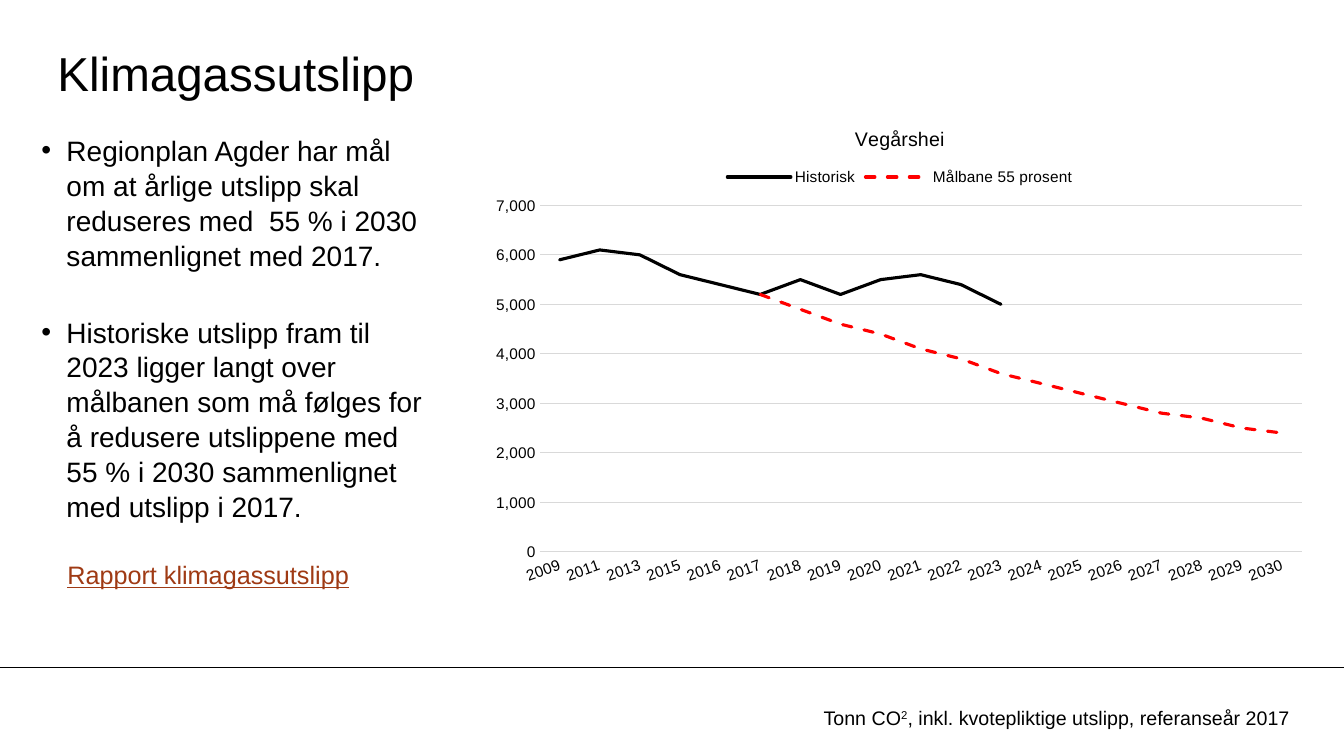
"""Builds the slide on greenhouse gas emissions in Vegårshei."""
import dataclasses

import pptx
import pptx.chart.data
import pptx.dml.color
import pptx.enum.chart
import pptx.enum.dml
import pptx.enum.shapes
import pptx.enum.text
import pptx.oxml
import pptx.oxml.ns
import pptx.util

HEADING = "Klimagassutslipp"
GOALS = [
    "Regionplan Agder har mål om at årlige utslipp skal reduseres med  55 % i 2030 sammenlignet med 2017.",
    "Historiske utslipp fram til 2023 ligger langt over målbanen som må følges for å redusere "
    "utslippene med 55 % i 2030 sammenlignet med utslipp i 2017.",
]
REPORT = "Rapport klimagassutslipp"
UNIT_NOTE = [("Tonn CO", 0), ("2", 30000), (", inkl. kvotepliktige utslipp, referanseår 2017", 0)]
CHART_TITLE = "Vegårshei"
YEARS = [2009, 2011, 2013, *range(2015, 2031)]
HISTORY = [5900, 6100, 6000, 5600, 5400, 5200, 5500, 5200, 5500, 5600, 5400, 5000]
TARGET = [5200, 4900, 4600, 4400, 4100, 3900, 3600, 3400, 3200, 3000, 2800, 2700, 2500, 2400]
BASE_YEAR = 2017

WIDTH, HEIGHT = 13.33, 7.5
AREAS = {
    "heading": (0.57, 0.34, 11.1, 0.75),
    "goals": (0.41, 1.31, 3.83, 3.81),
    "report": (0.57, 5.5, 3.16, 0.4),
    "unit": (8.07, 6.95, 5.09, 0.34),
    "chart": (4.77, 1.07, 8.31, 4.84),
}
FOOTER_TOP = 6.62
PLOT_SHARES = {"x": 0.07, "y": 0.2, "w": 0.91, "h": 0.71}


@dataclasses.dataclass(frozen=True)
class Theme:
    font: str = "Arial"
    ink: str = "000000"
    target: str = "FF0000"
    grid: str = "D9D9D9"
    link: str = "9F3A14"
    heading: int = 34
    body: int = 20
    report: int = 18
    note: int = 14
    chart: int = 11


THEME = Theme()
inch = pptx.util.Inches
rgb = pptx.dml.color.RGBColor.from_string


def style(font, size, color=THEME.ink):
    font.name, font.size, font.bold = THEME.font, pptx.util.Pt(size), False
    font.color.rgb = rgb(color)


def stroke(line, color, width):
    line.color.rgb, line.width = rgb(color), pptx.util.Pt(width)


def add_run(paragraph, text, size, color=THEME.ink):
    run = paragraph.add_run()
    run.text = text
    style(run.font, size, color)
    return run


def add_frame(slide, area, inset=True):
    frame = slide.shapes.add_textbox(*map(inch, AREAS[area])).text_frame
    frame.word_wrap = True
    if not inset:
        frame.margin_left = frame.margin_top = frame.margin_right = frame.margin_bottom = 0
    return frame


def xml(tag, **attributes):
    element = pptx.oxml.parse_xml(f"<{tag} {pptx.oxml.ns.nsdecls(tag.split(':')[0])}/>")
    for key, value in attributes.items():
        element.set(key, str(value))
    return element


def add_texts(slide):
    heading = add_frame(slide, "heading", inset=False)
    heading.vertical_anchor = pptx.enum.text.MSO_ANCHOR.MIDDLE
    add_run(heading.paragraphs[0], HEADING, THEME.heading)

    goals = add_frame(slide, "goals", inset=False)
    for index, goal in enumerate(GOALS):
        paragraph = goals.add_paragraph() if index else goals.paragraphs[0]
        properties = paragraph._p.get_or_add_pPr()
        properties.set("marL", str(inch(0.25)))
        properties.set("indent", str(inch(-0.25)))
        properties.append(xml("a:buFont", typeface=THEME.font))
        properties.append(xml("a:buChar", char="•"))
        paragraph.line_spacing = 1.04
        paragraph.space_before = pptx.util.Pt(30 if index else 0)
        add_run(paragraph, goal, THEME.body)

    report = add_frame(slide, "report").paragraphs[0]
    add_run(report, REPORT, THEME.report, THEME.link).font.underline = True

    unit = add_frame(slide, "unit").paragraphs[0]
    for text, baseline in UNIT_NOTE:
        run = add_run(unit, text, THEME.note)
        if baseline:
            run.font._element.set("baseline", str(baseline))


def add_footer_rule(slide):
    rule = slide.shapes.add_connector(
        pptx.enum.shapes.MSO_CONNECTOR.STRAIGHT, 0, inch(FOOTER_TOP), inch(WIDTH), inch(FOOTER_TOP))
    stroke(rule.line, THEME.ink, 0.75)
    rule._element.spPr.append(xml("a:effectLst"))


def place_plot(chart):
    plot_area = chart._chartSpace.chart.plotArea
    for previous in plot_area.findall(pptx.oxml.ns.qn("c:layout")):
        plot_area.remove(previous)
    layout, manual = xml("c:layout"), xml("c:manualLayout")
    manual.append(xml("c:layoutTarget", val="inner"))
    for side in "xy":
        manual.append(xml(f"c:{side}Mode", val="edge"))
    for side, share in PLOT_SHARES.items():
        manual.append(xml(f"c:{side}", val=share))
    layout.append(manual)
    plot_area.insert(0, layout)


def add_emissions_chart(slide):
    data = pptx.chart.data.CategoryChartData(number_format="#,##0")
    data.categories = [str(year) for year in YEARS]
    data.add_series("Historisk", HISTORY + [None] * (len(YEARS) - len(HISTORY)))
    data.add_series("Målbane 55 prosent", [None] * YEARS.index(BASE_YEAR) + TARGET)
    kinds = pptx.enum.chart
    chart = slide.shapes.add_chart(
        kinds.XL_CHART_TYPE.LINE, *map(inch, AREAS["chart"]), data).chart
    style(chart.font, THEME.chart)

    chart.has_title = True
    add_run(chart.chart_title.text_frame.paragraphs[0], CHART_TITLE, THEME.note)
    chart.has_legend = True
    chart.legend.position = kinds.XL_LEGEND_POSITION.TOP
    chart.legend.include_in_layout = False
    style(chart.legend.font, THEME.chart)

    years, tonnes = chart.category_axis, chart.value_axis
    for axis, number_format in ((years, "0"), (tonnes, "#,##0")):
        axis.major_tick_mark = axis.minor_tick_mark = kinds.XL_TICK_MARK.NONE
        axis.tick_labels.number_format = number_format
        axis.tick_labels.number_format_is_linked = False
        style(axis.tick_labels.font, THEME.chart)
    stroke(years.format.line, THEME.grid, 0.75)
    years._element.txPr.bodyPr.set("rot", str(-20 * 60000))
    tonnes.minimum_scale, tonnes.maximum_scale, tonnes.major_unit = 0, 7000, 1000
    tonnes.format.line.fill.background()
    stroke(tonnes.major_gridlines.format.line, THEME.grid, 0.75)

    chart.plots[0].vary_by_categories = False
    history, target = chart.plots[0].series
    for series, color in ((history, THEME.ink), (target, THEME.target)):
        series.smooth = False
        series.marker.style = kinds.XL_MARKER_STYLE.NONE
        stroke(series.format.line, color, 2.25)
        series.format.line._ln.set("cap", "rnd")
    target.format.line.dash_style = pptx.enum.dml.MSO_LINE.DASH
    place_plot(chart)


def main():
    deck = pptx.Presentation()
    deck.slide_width, deck.slide_height = inch(WIDTH), inch(HEIGHT)
    slide = deck.slides.add_slide(deck.slide_layouts[6])
    add_footer_rule(slide)
    add_texts(slide)
    add_emissions_chart(slide)
    deck.save("out.pptx")


if __name__ == "__main__":
    main()
